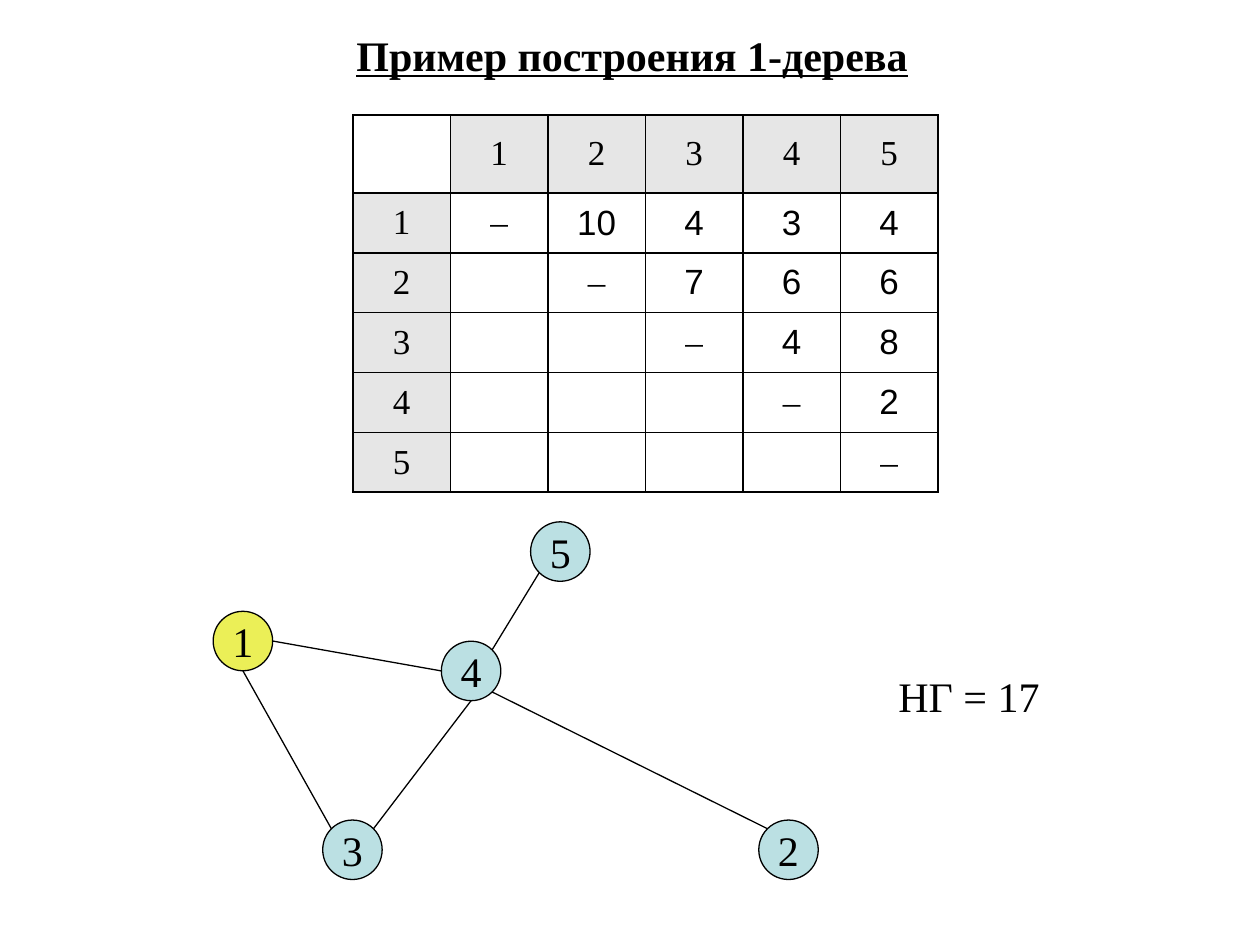
"""Build a slide showing a 1-tree example: a distance table and its graph."""
import math

import pptx
import pptx.dml.color
import pptx.enum.shapes
import pptx.enum.text
import pptx.oxml.ns
import pptx.util
from lxml import etree

Pt = pptx.util.Pt
ALIGN = pptx.enum.text.PP_ALIGN
ANCHOR = pptx.enum.text.MSO_ANCHOR
SERIF, SANS = "Times New Roman", "Arial"
COLOURS = {"ink": "000000", "header": "E6E6E6", "root": "EBEF57", "node": "BBE0E3"}
DISTANCES = [
    ["–", "10", "4", "3", "4"],
    ["", "–", "7", "6", "6"],
    ["", "", "–", "4", "8"],
    ["", "", "", "–", "2"],
    ["", "", "", "", "–"],
]
NODE_SIZE = 34
NODE_CENTRES = {
    1: (138.8, 366.3),
    2: (450.6, 485.6),
    3: (201.4, 485.6),
    4: (269.2, 383.4),
    5: (320.2, 315.2),
}
EDGES = [(4, -45, 5, 135), (4, 90, 3, -45), (4, 45, 2, -135), (1, 0, 4, 180), (1, 90, 3, -135)]


def colour(name):
    return pptx.dml.color.RGBColor.from_string(COLOURS[name])


def add_text(frame, text, size, font=SERIF, align=ALIGN.CENTER, bold=False, underline=False):
    para = frame.paragraphs[0]
    para.alignment = align
    span = para.add_run()
    span.text = text
    span.font.name = font
    span.font.size = Pt(size)
    span.font.bold = bold
    span.font.underline = underline
    span.font.color.rgb = colour("ink")


def fit_frame(frame):
    frame.word_wrap = False
    frame.auto_size = pptx.enum.text.MSO_AUTO_SIZE.SHAPE_TO_FIT_TEXT
    frame.vertical_anchor = ANCHOR.TOP


def set_title(page, text):
    title = page.shapes.title
    title.left, title.top, title.width, title.height = Pt(193.5), Pt(13), Pt(335.5), Pt(36)
    fit_frame(title.text_frame)
    add_text(title.text_frame, text, 24, bold=True, underline=True)


def add_label(page, text, left, top, width, height):
    box = page.shapes.add_textbox(Pt(left), Pt(top), Pt(width), Pt(height))
    fit_frame(box.text_frame)
    add_text(box.text_frame, text, 24, align=ALIGN.LEFT)


def border_cell(cell, width):
    properties = cell._tc.get_or_add_tcPr()
    qn = pptx.oxml.ns.qn
    for side in ("lnL", "lnR", "lnT", "lnB"):
        line = etree.SubElement(properties, qn("a:" + side), w=str(Pt(width)))
        fill = etree.SubElement(line, qn("a:solidFill"))
        etree.SubElement(fill, qn("a:srgbClr"), val=COLOURS["ink"])


def fill_cell(cell, text, is_header):
    border_cell(cell, 1)
    cell.vertical_anchor = ANCHOR.MIDDLE
    if is_header:
        cell.fill.solid()
        cell.fill.fore_color.rgb = colour("header")
    else:
        cell.fill.background()
    if text:
        font = SANS if text.isdigit() and not is_header else SERIF
        add_text(cell.text_frame, text, 20, font)


def add_distance_table(page):
    labels = [str(number) for number in NODE_CENTRES]
    rows = [[""] + labels] + [[label] + row for label, row in zip(labels, DISTANCES)]
    count = len(rows)
    frame = page.shapes.add_table(count, count, Pt(201.6), Pt(65.8), Pt(334.5), Pt(215.5))
    table = frame.table
    table.first_row = table.horz_banding = False
    for index in range(count):
        table.columns[index].width = Pt(55.75)
        table.rows[index].height = Pt(34.2 if index else 44.5)
    for row, texts in enumerate(rows):
        for column, text in enumerate(texts):
            is_header = (row == 0) != (column == 0)
            fill_cell(table.cell(row, column), text, is_header)


def add_node(page, number, fill):
    x, y = NODE_CENTRES[number]
    node = page.shapes.add_shape(
        pptx.enum.shapes.MSO_SHAPE.OVAL,
        Pt(x - NODE_SIZE / 2), Pt(y - NODE_SIZE / 2), Pt(NODE_SIZE), Pt(NODE_SIZE))
    node.shadow.inherit = False
    node.fill.solid()
    node.fill.fore_color.rgb = colour(fill)
    node.line.color.rgb = colour("ink")
    node.line.width = Pt(0.75)
    node.text_frame.word_wrap = False
    node.text_frame.vertical_anchor = ANCHOR.MIDDLE
    add_text(node.text_frame, str(number), 24)


def rim_point(number, degrees):
    x, y = NODE_CENTRES[number]
    angle = math.radians(degrees)
    radius = NODE_SIZE / 2
    return Pt(x + radius * math.cos(angle)), Pt(y + radius * math.sin(angle))


def add_edge(page, start, start_angle, end, end_angle):
    edge = page.shapes.add_connector(
        pptx.enum.shapes.MSO_CONNECTOR.STRAIGHT,
        *rim_point(start, start_angle), *rim_point(end, end_angle))
    edge.line.color.rgb = colour("ink")
    edge.line.width = Pt(0.75)
    etree.SubElement(edge._element.spPr, pptx.oxml.ns.qn("a:effectLst"))


def main():
    deck = pptx.Presentation()
    deck.slide_width, deck.slide_height = Pt(720), Pt(540)
    page = deck.slides.add_slide(deck.slide_layouts.get_by_name("Title Only"))
    set_title(page, "Пример построения 1-дерева")
    add_distance_table(page)
    for number in NODE_CENTRES:
        add_node(page, number, "root" if number == 1 else "node")
    for edge in EDGES:
        add_edge(page, *edge)
    add_label(page, "НГ = 17", 506.2, 379.5, 95, 36)
    deck.save("out.pptx")


if __name__ == "__main__":
    main()
